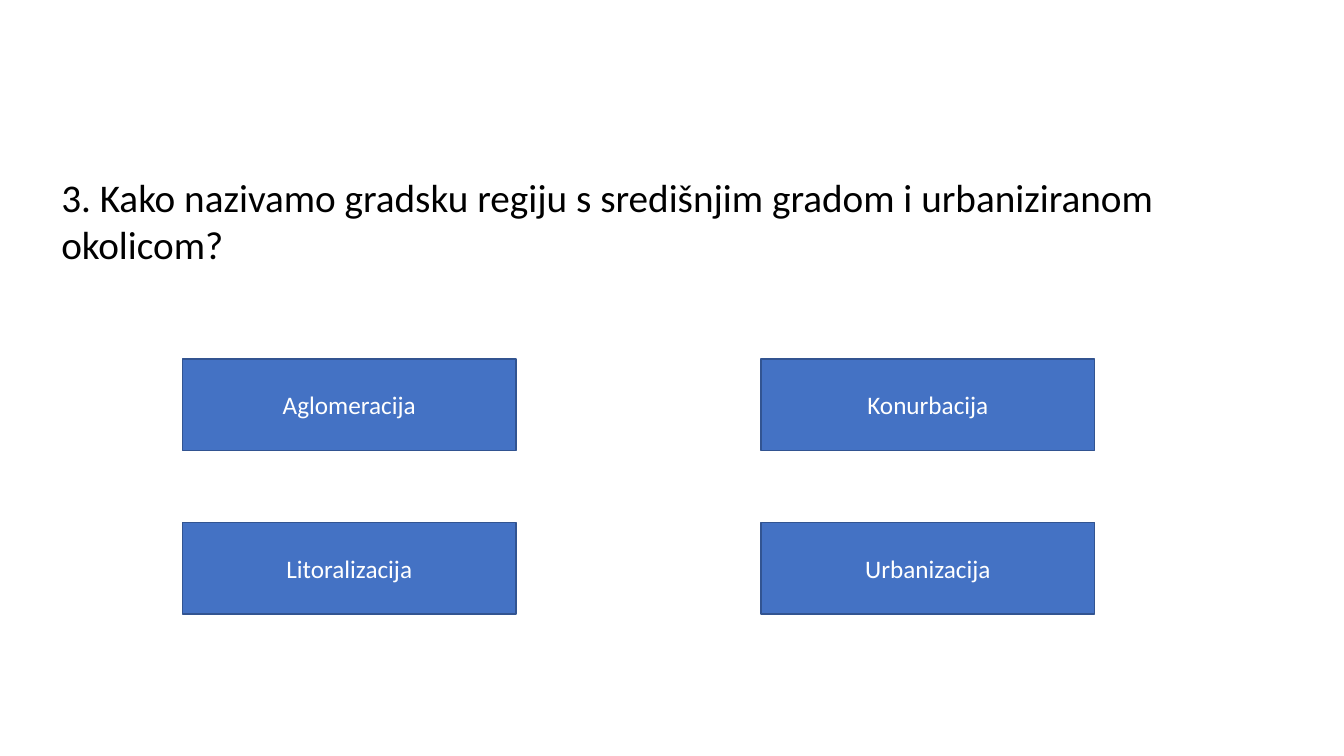
from dataclasses import dataclass

from pptx import Presentation
from pptx.dml.color import RGBColor as Color
from pptx.enum.shapes import MSO_SHAPE as Form
from pptx.enum.text import MSO_ANCHOR as Anchor, MSO_AUTO_SIZE as Fit, PP_ALIGN as Align
from pptx.shapes.autoshape import Shape
from pptx.slide import Slide
from pptx.util import Pt


@dataclass(frozen=True)
class Theme:
    face: str = "Calibri"
    ink: str = "000000"
    light: str = "FFFFFF"
    fill: str = "4472C4"
    edge: str = "325491"
    large: float = 28
    small: float = 18
    rule: float = 1


@dataclass(frozen=True)
class Box:
    left: float
    top: float
    width: float
    height: float

    def lengths(self) -> list[Pt]:
        return [Pt(n) for n in (self.left, self.top, self.width, self.height)]


@dataclass(frozen=True)
class Answer:
    text: str
    row: int
    col: int


THEME = Theme()
QUERY = "3. Kako nazivamo gradsku regiju s središnjim gradom i urbaniziranom okolicom?"
PLACE = Box(36.7, 120.2, 897, 74.9)
FIRST = Box(130.3, 256.3, 238.3, 65.5)
STEP_X, STEP_Y = 413.3, 116.7
ANSWERS = [
    Answer("Aglomeracija", 0, 0),
    Answer("Konurbacija", 0, 1),
    Answer("Litoralizacija", 1, 0),
    Answer("Urbanizacija", 1, 1),
]


def write(shape: Shape, text: str, size: float, color: str,
          align: Align, frame: dict[str, object]) -> None:
    """Fill the shape with one paragraph and apply the frame's format values."""
    body = shape.text_frame
    for name, value in frame.items():
        setattr(body, name, value)
    para = body.paragraphs[0]
    para.alignment = align
    run = para.add_run()
    run.text = text
    for name, value in {"name": THEME.face, "size": Pt(size)}.items():
        setattr(run.font, name, value)
    run.font.color.rgb = Color.from_string(color)


def ask(slide: Slide) -> None:
    shape = slide.shapes.add_textbox(*PLACE.lengths())
    write(shape, QUERY, THEME.large, THEME.ink, Align.LEFT,
          {"word_wrap": True, "auto_size": Fit.SHAPE_TO_FIT_TEXT})


def offer(slide: Slide, answer: Answer) -> None:
    box = Box(FIRST.left + answer.col * STEP_X, FIRST.top + answer.row * STEP_Y,
              FIRST.width, FIRST.height)
    shape = slide.shapes.add_shape(Form.RECTANGLE, *box.lengths())
    shape.shadow.inherit = False
    shape.fill.solid()
    shape.fill.fore_color.rgb = Color.from_string(THEME.fill)
    shape.line.color.rgb = Color.from_string(THEME.edge)
    shape.line.width = Pt(THEME.rule)
    write(shape, answer.text, THEME.small, THEME.light, Align.CENTER,
          {"word_wrap": True, "vertical_anchor": Anchor.MIDDLE})


def main() -> None:
    deck = Presentation()
    deck.slide_width, deck.slide_height = Pt(960), Pt(540)
    slide = deck.slides.add_slide(deck.slide_layouts[6])
    ask(slide)
    for answer in ANSWERS:
        offer(slide, answer)
    deck.save("out.pptx")


if __name__ == "__main__":
    main()
